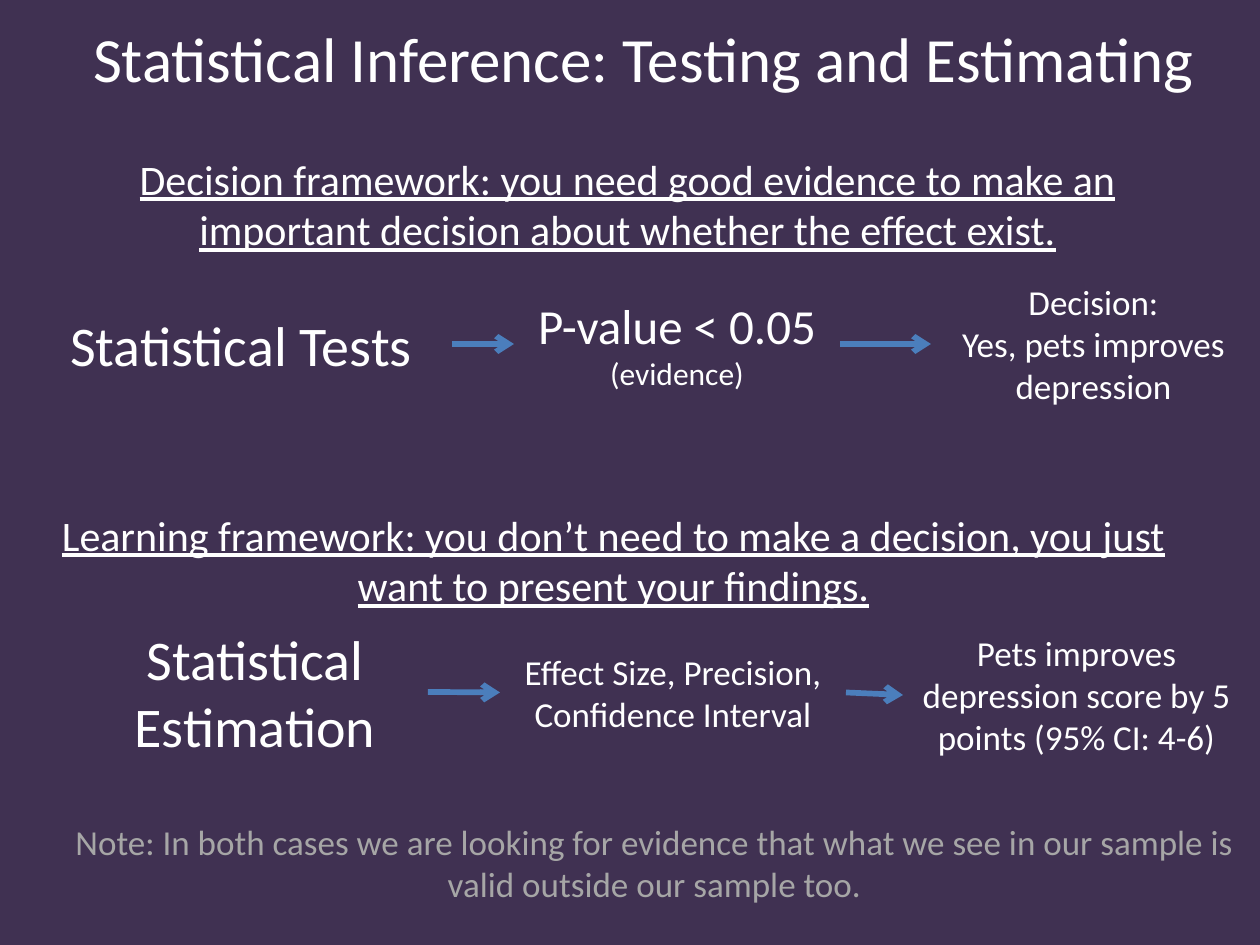
"""Build a slide that contrasts statistical testing with statistical estimation."""
from lxml import etree
from pptx import Presentation
from pptx.dml.color import RGBColor
from pptx.enum.shapes import MSO_CONNECTOR
from pptx.enum.text import MSO_ANCHOR, MSO_AUTO_SIZE, PP_ALIGN
from pptx.oxml.ns import qn
from pptx.util import Pt

STRAIGHT = MSO_CONNECTOR.STRAIGHT
TOP, MIDDLE = MSO_ANCHOR.TOP, MSO_ANCHOR.MIDDLE
GROW, FIXED = MSO_AUTO_SIZE.SHAPE_TO_FIT_TEXT, MSO_AUTO_SIZE.NONE
CENTER = PP_ALIGN.CENTER
PX = 914400 / 126
LEFT_SIDE, RIGHT_SIDE = 1, 3


def color(hex_string):
    return RGBColor.from_string(hex_string)


def add_text(box, lines, sizes, fill="FFFFFF", underline=False, anchor=TOP, auto_size=GROW):
    shape = slide.shapes.add_textbox(*(round(length * PX) for length in box))
    frame = shape.text_frame
    frame.word_wrap = True
    frame.auto_size = auto_size
    frame.vertical_anchor = anchor
    frame.text = "\n".join(lines)
    for paragraph, size in zip(frame.paragraphs, sizes):
        paragraph.alignment = CENTER
        font = paragraph.runs[0].font
        font.name = "Calibri"
        font.size = Pt(size)
        font.underline = underline
        font.color.rgb = color(fill)
    return shape


presentation = Presentation()
presentation.slide_width = round(1260 * PX)
presentation.slide_height = round(945 * PX)
slide = presentation.slides.add_slide(presentation.slide_layouts[6])
slide.background.fill.solid()
slide.background.fill.fore_color.rgb = color("403152")

add_text((58, 1, 1171, 112), ["Statistical Inference: Testing and Estimating"], [36],
         anchor=MIDDLE, auto_size=FIXED)

frameworks = [
    ((58, 147, 1139, 115),
     "Decision framework: you need good evidence to make an important decision "
     "about whether the effect exist.",
     [((30, 304, 422, 80), ["Statistical Tests"], [32]),
      ((514, 289, 326, 110), ["P-value < 0.05", "(evidence)"], [28, 18]),
      ((931, 274, 325, 140), ["Decision:", "Yes, pets improves depression"], [20, 20])]),
    ((44, 503, 1139, 115),
     "Learning framework: you don’t need to make a decision, you just want to "
     "present your findings.",
     [((82, 618, 346, 148), ["Statistical Estimation"], [32]),
      ((500, 644, 346, 97), ["Effect Size, Precision, Confidence Interval"], [20]),
      ((903, 625, 347, 140),
       ["Pets improves depression score by 5 points (95% CI: 4-6)"], [20])]),
]
for heading_box, heading, steps in frameworks:
    add_text(heading_box, [heading], [24], underline=True)
    step_shapes = [add_text(*step) for step in steps]
    for source, target in zip(step_shapes, step_shapes[1:]):
        arrow = slide.shapes.add_connector(STRAIGHT, 0, 0, 0, 0)
        arrow.begin_connect(source, RIGHT_SIDE)
        arrow.end_connect(target, LEFT_SIDE)
        arrow.line.color.rgb = color("4B7EBC")
        arrow.line.width = Pt(3.25)
        line_properties = arrow.line._get_or_add_ln()
        etree.SubElement(line_properties, qn("a:tailEnd"), type="arrow")
        etree.SubElement(arrow._element.spPr, qn("a:effectLst"))

add_text((53, 814, 1203, 97),
         ["Note: In both cases we are looking for evidence that what we see in our "
          "sample is valid outside our sample too."], [20], fill="A6A6A6")

presentation.save("out.pptx")
